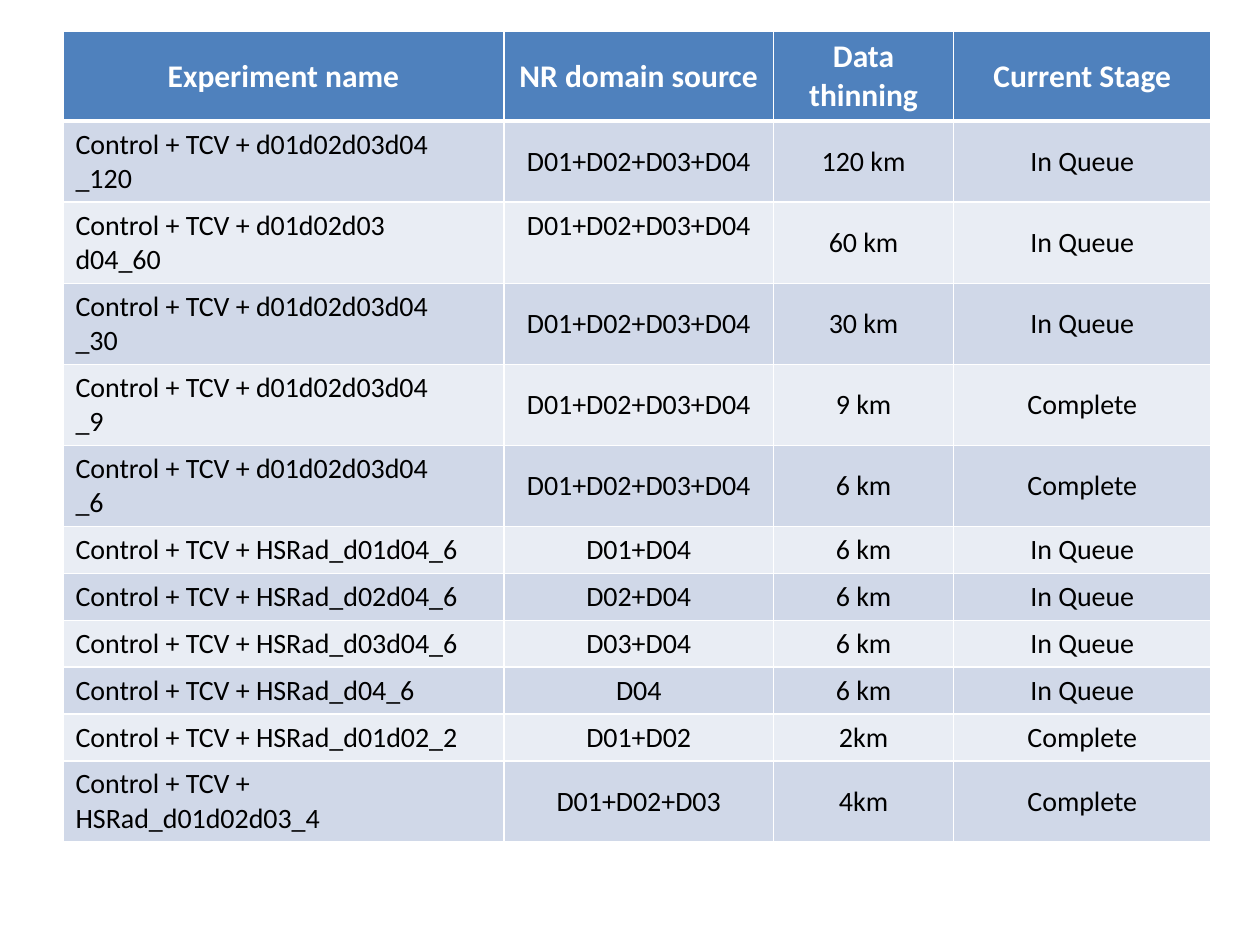
"""Build a slide with a table of experiments and their current stage."""
from lxml import etree
from pptx import Presentation
from pptx.dml.color import RGBColor
from pptx.enum.text import MSO_ANCHOR, PP_ALIGN
from pptx.oxml.ns import qn
from pptx.util import Pt

LEFT, CENTER = PP_ALIGN.LEFT, PP_ALIGN.CENTER
TOP, MIDDLE = MSO_ANCHOR.TOP, MSO_ANCHOR.MIDDLE
WHITE = RGBColor(0xFF, 0xFF, 0xFF)
BLACK = RGBColor(0x00, 0x00, 0x00)
HEADER_BLUE = RGBColor(0x4F, 0x81, 0xBD)
BANDS = (RGBColor(0xD0, 0xD8, 0xE8), RGBColor(0xE9, 0xED, 0xF4))

COLUMN_WIDTHS = (252, 154, 103, 147)
ROW_HEIGHTS = (44.6,) + (40.3,) * 5 + (23.8,) * 6
TABLE_HEIGHT = 455.8
ALL_DOMAINS = "D01+D02+D03+D04"
HEADINGS = ("Experiment name", "NR domain source", "Data thinning", "Current Stage")
EXPERIMENTS = (
    ("d01d02d03d04\n_120", ALL_DOMAINS, "120 km", "In Queue"),
    ("d01d02d03\nd04_60", ALL_DOMAINS, "60 km", "In Queue"),
    ("d01d02d03d04\n_30", ALL_DOMAINS, "30 km", "In Queue"),
    ("d01d02d03d04\n_9", ALL_DOMAINS, "9 km", "Complete"),
    ("d01d02d03d04\n_6", ALL_DOMAINS, "6 km", "Complete"),
    ("HSRad_d01d04_6", "D01+D04", "6 km", "In Queue"),
    ("HSRad_d02d04_6", "D02+D04", "6 km", "In Queue"),
    ("HSRad_d03d04_6", "D03+D04", "6 km", "In Queue"),
    ("HSRad_d04_6", "D04", "6 km", "In Queue"),
    ("HSRad_d01d02_2", "D01+D02", "2km", "Complete"),
    ("HSRad_d01d02d03_4", "D01+D02+D03", "4km", "Complete"),
)


class SlideBuilder:
    """Hold the text style and the current slide."""

    font_name = "Calibri"
    header_size = 18
    body_size = 16

    def __init__(self, slide):
        self.slide = slide

    def add_table(self, left, top, widths, heights):
        """Add an empty table with the given column widths and row heights."""
        shape = self.slide.shapes.add_table(
            len(heights), len(widths), Pt(left), Pt(top), Pt(sum(widths)), Pt(sum(heights)))
        for column, width in zip(shape.table.columns, widths):
            column.width = Pt(width)
        for row, height in zip(shape.table.rows, heights):
            row.height = Pt(height)
        return shape

    def set_borders(self, cell, top=1, bottom=1):
        """Draw white borders round a cell."""
        properties = cell._tc.get_or_add_tcPr()
        edges = (("a:lnL", 1), ("a:lnR", 1), ("a:lnT", top), ("a:lnB", bottom))
        for position, (tag, width) in enumerate(edges):
            line = etree.Element(qn(tag), w=str(Pt(width)))
            fill = etree.SubElement(line, qn("a:solidFill"))
            etree.SubElement(fill, qn("a:srgbClr"), val=str(WHITE))
            properties.insert(position, line)

    def fill_cell(self, cell, text, fill, alignment=CENTER, anchor=MIDDLE, header=False):
        """Write the text of a cell, one paragraph a line, on a solid fill."""
        cell.fill.solid()
        cell.fill.fore_color.rgb = fill
        cell.vertical_anchor = anchor
        frame = cell.text_frame
        for index, line in enumerate(text.split("\n")):
            paragraph = frame.add_paragraph() if index else frame.paragraphs[0]
            paragraph.alignment = alignment
            run = paragraph.add_run()
            run.text = line
            run.font.name = self.font_name
            run.font.size = Pt(self.header_size if header else self.body_size)
            run.font.bold = header
            run.font.color.rgb = WHITE if header else BLACK


def main():
    """Build and save the presentation."""
    presentation = Presentation()
    presentation.slide_width, presentation.slide_height = Pt(720), Pt(540)
    slide = presentation.slides.add_slide(presentation.slide_layouts[6])
    builder = SlideBuilder(slide)
    shape = builder.add_table(36, 18, COLUMN_WIDTHS, ROW_HEIGHTS)
    shape.height = Pt(TABLE_HEIGHT)
    table = shape.table

    for column, heading in enumerate(HEADINGS):
        cell = table.cell(0, column)
        builder.fill_cell(cell, heading, HEADER_BLUE, header=True)
        builder.set_borders(cell, bottom=3)

    for row, (name, *details) in enumerate(EXPERIMENTS, start=1):
        for column, text in enumerate((f"Control + TCV + {name}", *details)):
            cell = table.cell(row, column)
            alignment = CENTER if column else LEFT
            anchor = TOP if (row, column) == (2, 1) else MIDDLE
            builder.fill_cell(cell, text, BANDS[(row - 1) % 2], alignment, anchor)
            builder.set_borders(cell, top=3 if row == 1 else 1)

    presentation.save("out.pptx")


if __name__ == "__main__":
    main()
